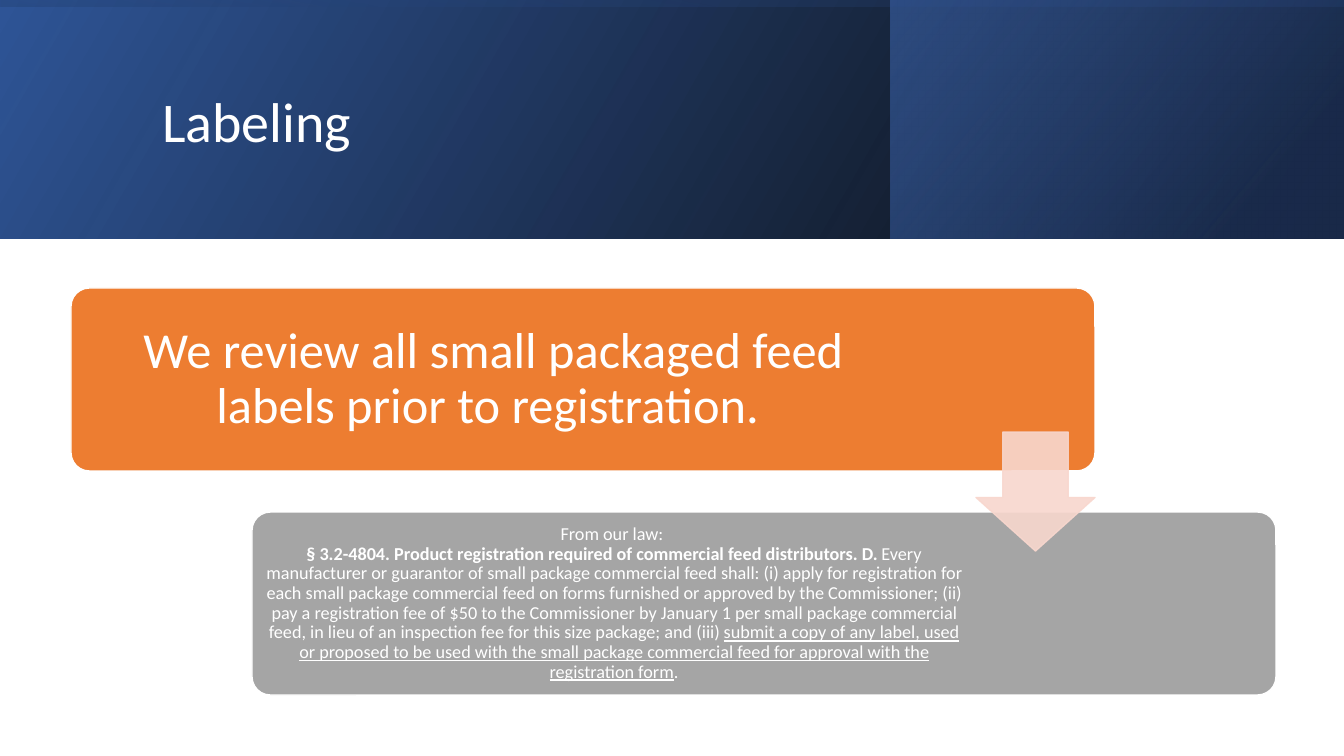
import dataclasses

import pptx
import pptx.dml.color
import pptx.enum.shapes
import pptx.enum.text
import pptx.oxml
import pptx.oxml.ns
import pptx.util


@dataclasses.dataclass(frozen=True)
class Theme:
    font: str = "Calibri"
    white: str = "FFFFFF"
    orange: str = "ED7D31"
    gray: str = "A5A5A5"
    arrow: str = "F8D7CE"
    arrow_alpha: int = 90
    title_size: int = 40
    statement_size: int = 36
    law_size: int = 13


THEME = Theme()
PX_PER_INCH = 100.8
SLIDE_WIDTH, SLIDE_HEIGHT = 1344, 756
BAND_HEIGHT = 239
CARD_WIDTH, CARD_HEIGHT = 1024, 183
CARD_LEFT, CARD_TOP = 71, 288
CARD_STEP_X, CARD_STEP_Y = 181, 224
TEXT_MARGIN = 5

TITLE = "Labeling"
TITLE_BOX = (152, 38, 1072, 173)
ARROW_BOX = (976, 432, 119, 119)

BANDS = [
    {"box": (0, 0, SLIDE_WIDTH, BAND_HEIGHT), "rotation": 0, "angle": 330,
     "stops": [(0, "000000", 96), (100, "2F5597", 100)]},
    {"box": (891, 0, 452, BAND_HEIGHT), "rotation": 0, "angle": 320,
     "stops": [(19, "203864", 68), (100, "4472C4", 48)]},
    {"box": ((SLIDE_WIDTH - BAND_HEIGHT) / 2, (BAND_HEIGHT - SLIDE_WIDTH) / 2,
             BAND_HEIGHT, SLIDE_WIDTH), "rotation": 270, "angle": 350,
     "stops": [(23, "2F5597", 16), (99, "000000", 45)]},
]

CARDS = [
    {"color": THEME.orange, "size": THEME.statement_size, "text_width": 835, "inset": 15,
     "runs": [("We review all small packaged feed labels prior to registration. ", "")]},
    {"color": THEME.gray, "size": THEME.law_size, "text_width": 714, "inset": 5,
     "runs": [
         ("From our law: ", "break"),
         ("§ 3.2-4804. Product registration required of commercial feed distributors. D. ", "bold"),
         ("Every manufacturer or guarantor of small package commercial feed shall: "
          "(i) apply for registration for each small package commercial feed on forms "
          "furnished or approved by the Commissioner; (ii) pay a registration fee of $50 "
          "to the Commissioner by January 1 per small package commercial feed, in lieu of "
          "an inspection fee for this size package; and (iii) ", ""),
         ("submit a copy of any label, used or proposed to be used with the small package "
          "commercial feed for approval with the registration form", "underline"),
         (".", ""),
     ]},
]


def px(length):
    return pptx.util.Emu(round(length * 914400 / PX_PER_INCH))


def rgb(color):
    return pptx.dml.color.RGBColor.from_string(color)


def add_panel(slide, kind, box):
    shape = slide.shapes.add_shape(kind, *map(px, box))
    shape.shadow.inherit = False
    return shape


def fill_solid(shape, color, line_color):
    shape.fill.solid()
    shape.fill.fore_color.rgb = rgb(color)
    shape.line.color.rgb = rgb(line_color)
    shape.line.width = pptx.util.Pt(1)


def add_band(slide, title, band):
    shape = add_panel(slide, pptx.enum.shapes.MSO_SHAPE.RECTANGLE, band["box"])
    shape.rotation = band["rotation"]
    shape.line.fill.background()
    shape.fill.background()
    stops = "".join(
        f'<a:gs pos="{position * 1000}"><a:srgbClr val="{color}">'
        f'<a:alpha val="{alpha * 1000}"/></a:srgbClr></a:gs>'
        for position, color, alpha in band["stops"]
    )
    gradient = pptx.oxml.parse_xml(
        f'<a:gradFill {pptx.oxml.ns.nsdecls("a")} rotWithShape="1"><a:gsLst>{stops}</a:gsLst>'
        f'<a:lin ang="{band["angle"] * 60000}" scaled="0"/></a:gradFill>'
    )
    properties = shape.element.spPr
    properties.replace(properties.find(pptx.oxml.ns.qn("a:noFill")), gradient)
    properties.find(pptx.oxml.ns.qn("a:xfrm")).set("flipH", "1")
    title.element.addprevious(shape.element)


def add_run(paragraph, text, size, style=""):
    run = paragraph.add_run()
    run.text = text
    run.font.name = THEME.font
    run.font.size = pptx.util.Pt(size)
    run.font.color.rgb = rgb(THEME.white)
    run.font.bold = style == "bold"
    run.font.underline = style == "underline"
    if style == "break":
        paragraph.add_line_break()


def add_title(slide):
    title = slide.shapes.title
    title.left, title.top, title.width, title.height = map(px, TITLE_BOX)
    frame = title.text_frame
    frame.auto_size = pptx.enum.text.MSO_AUTO_SIZE.NONE
    frame.vertical_anchor = pptx.enum.text.MSO_ANCHOR.MIDDLE
    paragraph = frame.paragraphs[0]
    paragraph.alignment = pptx.enum.text.PP_ALIGN.LEFT
    paragraph.line_spacing = 0.9
    add_run(paragraph, TITLE, THEME.title_size)
    return title


def add_card(slide, index, card):
    left = CARD_LEFT + index * CARD_STEP_X
    top = CARD_TOP + index * CARD_STEP_Y
    shape = add_panel(slide, pptx.enum.shapes.MSO_SHAPE.ROUNDED_RECTANGLE,
                      (left, top, CARD_WIDTH, CARD_HEIGHT))
    shape.adjustments[0] = 0.1
    fill_solid(shape, card["color"], THEME.white)

    text_box = (left + TEXT_MARGIN, top + TEXT_MARGIN,
                card["text_width"], CARD_HEIGHT - 2 * TEXT_MARGIN)
    frame = slide.shapes.add_textbox(*map(px, text_box)).text_frame
    frame.word_wrap = True
    frame.vertical_anchor = pptx.enum.text.MSO_ANCHOR.MIDDLE
    inset = px(card["inset"])
    frame.margin_left = frame.margin_right = inset
    frame.margin_top = frame.margin_bottom = inset
    paragraph = frame.paragraphs[0]
    paragraph.alignment = pptx.enum.text.PP_ALIGN.CENTER
    paragraph.line_spacing = 0.9
    for text, style in card["runs"]:
        add_run(paragraph, text, card["size"], style)


def add_arrow(slide):
    shape = add_panel(slide, pptx.enum.shapes.MSO_SHAPE.DOWN_ARROW, ARROW_BOX)
    shape.adjustments[0] = 0.55
    shape.adjustments[1] = 0.45
    fill_solid(shape, THEME.arrow, THEME.arrow)
    for color in shape.element.spPr.iter(pptx.oxml.ns.qn("a:srgbClr")):
        color.append(pptx.oxml.parse_xml(
            f'<a:alpha {pptx.oxml.ns.nsdecls("a")} val="{THEME.arrow_alpha * 1000}"/>'))


def main():
    presentation = pptx.Presentation()
    presentation.slide_width = px(SLIDE_WIDTH)
    presentation.slide_height = px(SLIDE_HEIGHT)
    slide = presentation.slides.add_slide(presentation.slide_layouts[5])
    title = add_title(slide)
    for band in BANDS:
        add_band(slide, title, band)
    for index, card in enumerate(CARDS):
        add_card(slide, index, card)
    add_arrow(slide)
    presentation.save("out.pptx")


if __name__ == "__main__":
    main()
